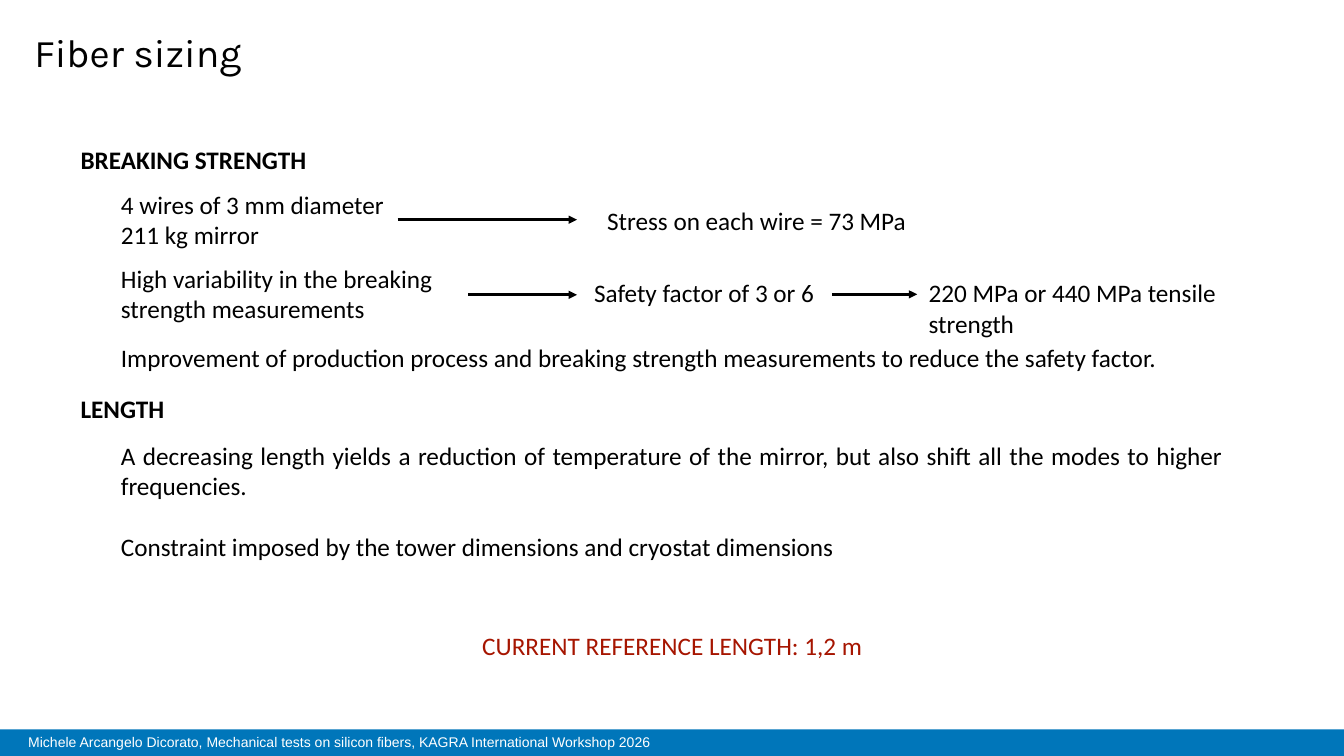
from lxml.etree import SubElement
from pptx import Presentation
from pptx.dml.color import RGBColor
from pptx.enum.shapes import MSO_CONNECTOR, MSO_SHAPE
from pptx.enum.text import MSO_ANCHOR, MSO_AUTO_SIZE, PP_ALIGN
from pptx.oxml.ns import qn
from pptx.util import Pt

PX = 9144  # 100 px to the inch
COLORS = {"text": "000000", "result": "A61500", "bar": "0076BA", "footer": "FFFFFF"}

prs = Presentation()
prs.slide_width, prs.slide_height = 2667 * PX, 1500 * PX
s = prs.slides.add_slide(prs.slide_layouts[5])


def write(sp, *lines, size=36, font="Calibri", color="text", bold=False,
          align=PP_ALIGN.LEFT, anchor=MSO_ANCHOR.TOP, inset=10, gap=0, spacing=None):
    tf = sp.text_frame
    tf.word_wrap = True
    tf.auto_size = MSO_AUTO_SIZE.NONE
    tf.vertical_anchor = anchor
    tf.margin_left = tf.margin_right = tf.margin_top = tf.margin_bottom = inset * PX
    for i, line in enumerate(lines):
        p = tf.add_paragraph() if i else tf.paragraphs[0]
        p.alignment = align
        p.space_before = Pt(gap if i else 0)
        if spacing:
            p.line_spacing = spacing
        r = p.add_run()
        r.text = line
        r.font.size, r.font.name, r.font.bold = Pt(size), font, bold
        r.font.color.rgb = RGBColor.from_string(COLORS[color])


def add_text(x, y, w, h, *lines, **fmt):
    sp = s.shapes.add_textbox(x * PX, y * PX, w * PX, h * PX)
    write(sp, *lines, **fmt)


# Title
title = s.shapes.title
title.left, title.top, title.width, title.height = 58 * PX, 37 * PX, 1999 * PX, 145 * PX
write(title, "Fiber sizing", size=56, font="Karla", anchor=MSO_ANCHOR.MIDDLE, spacing=0.9)

# Section headings
for y, heading in [(277, "BREAKING STRENGTH"), (770, "LENGTH")]:
    add_text(150, y, 533, 70, heading, bold=True)

# Breaking strength: from inputs to required strength
add_text(230, 365, 699, 131, "4 wires of 3 mm diameter", "211 kg mirror")
add_text(1195, 397, 662, 70, "Stress on each wire = 73 MPa")
add_text(230, 512, 699, 131, "High variability in the breaking strength measurements")
add_text(1169, 541, 469, 81, "Safety factor of 3 or 6")
add_text(1833, 541, 699, 141, "220 MPa or 440 MPa tensile strength")
add_text(230, 670, 2207, 70,
         "Improvement of production process and breaking strength measurements "
         "to reduce the safety factor.", align=PP_ALIGN.JUSTIFY)

# Arrows between the steps
for x1, x2, y in [(789, 1145, 436), (929, 1145, 585), (1651, 1820, 584)]:
    c = s.shapes.add_connector(MSO_CONNECTOR.STRAIGHT, x1 * PX, y * PX, x2 * PX, y * PX)
    c.line.width = Pt(4)
    c.line.color.rgb = RGBColor.from_string(COLORS["text"])
    SubElement(c.line._get_or_add_ln(), qn("a:tailEnd"), type="triangle")
    SubElement(c._element.spPr, qn("a:effectLst"))

# Length: constraints and current value
add_text(230, 863, 2207, 315,
         "A decreasing length yields a reduction of temperature of the mirror, "
         "but also shift all the modes to higher frequencies.",
         "Constraint imposed by the tower dimensions and cryostat dimensions",
         align=PP_ALIGN.JUSTIFY, gap=44)
add_text(723, 1240, 1222, 81, "CURRENT REFERENCE LENGTH: 1,2 m",
         color="result", align=PP_ALIGN.CENTER)

# Footer bar
bar = s.shapes.add_shape(MSO_SHAPE.RECTANGLE, 0, 1447 * PX, 2667 * PX, 55 * PX)
bar.shadow.inherit = False
bar.fill.solid()
bar.fill.fore_color.rgb = RGBColor.from_string(COLORS["bar"])
bar.line.fill.background()
add_text(50, 1450, 1283, 45,
         "Michele Arcangelo Dicorato, Mechanical tests on silicon fibers, "
         "KAGRA International Workshop 2026",
         size=20, font="Arial", color="footer", anchor=MSO_ANCHOR.MIDDLE, inset=6)

prs.save("out.pptx")
